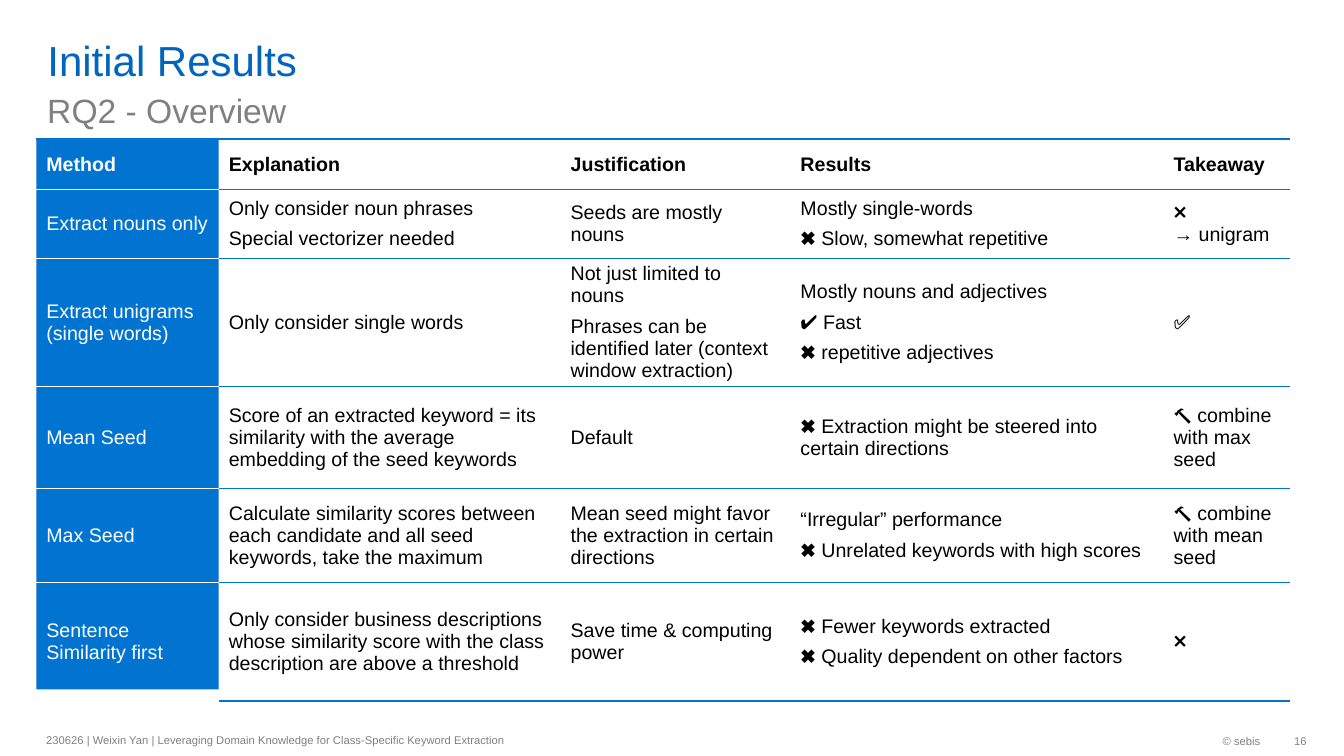
import pptx
import pptx.util
import pptx.oxml.ns
import pptx.dml.color
import pptx.enum.text
import pptx.enum.shapes
from lxml import etree

Inches = pptx.util.Inches
Pt = pptx.util.Pt
ALIGN = pptx.enum.text.PP_ALIGN
ANCHOR = pptx.enum.text.MSO_ANCHOR

BLUE, TITLE, GREY = "0173D0", "0065BD", "808080"
WHITE, BLACK = "FFFFFF", "000000"

COLS = [1.81, 3.39, 2.28, 3.7, 1.26]
HIGHS = [0.5, 0.68, 1.16, 1.01, 0.93, 1.18]

# Within a cell, \n starts a paragraph and \v breaks a line
ROWS = [
    ["Method", "Explanation", "Justification", "Results", "Takeaway"],
    ["Extract nouns only",
     "Only consider noun phrases\nSpecial vectorizer needed",
     "Seeds are mostly nouns",
     "Mostly single-words\n✖️ Slow, somewhat repetitive",
     "❌\v→ unigram"],
    ["Extract unigrams (single words)",
     "Only consider single words",
     "Not just limited to nouns\n"
     "Phrases can be identified later (context window extraction)",
     "Mostly nouns and adjectives\n✔ Fast\n✖️ repetitive adjectives",
     "✅"],
    ["Mean Seed",
     "Score of an extracted keyword = its similarity with the average "
     "embedding of the seed keywords",
     "Default",
     "✖️ Extraction might be steered into certain directions",
     "🔨 combine with max seed"],
    ["Max Seed",
     "Calculate similarity scores between each candidate and all seed "
     "keywords, take the maximum",
     "Mean seed might favor the extraction in certain directions",
     "“Irregular” performance\n✖️ Unrelated keywords with high scores",
     "🔨 combine with mean seed"],
    ["Sentence Similarity first",
     "Only consider business descriptions whose similarity score with the "
     "class description are above a threshold",
     "Save time & computing power",
     "✖️ Fewer keywords extracted\n✖️ Quality dependent on other factors",
     "❌"],
]


def color(code):
    return pptx.dml.color.RGBColor.from_string(code)


class Deck:
    font = "Arial"

    def __init__(self):
        self.prs = pptx.Presentation()
        self.prs.slide_width = Inches(13.33)
        self.prs.slide_height = Inches(7.5)
        self.slide = self.prs.slides.add_slide(self.prs.slide_layouts[5])

    def label(self, frame, text, size, code, bold=False, align=ALIGN.LEFT, after=0):
        frame.text = text
        for para in frame.paragraphs:
            para.alignment = align
            para.space_before = Pt(0)
            para.space_after = Pt(after)
            for run in para.runs:
                run.font.name = self.font
                run.font.size = Pt(size)
                run.font.bold = bold
                run.font.color.rgb = color(code)

    def setup(self, frame, anchor, pads, wrap=True):
        frame.auto_size = pptx.enum.text.MSO_AUTO_SIZE.NONE
        frame.word_wrap = wrap
        frame.vertical_anchor = anchor
        left, top, right, bottom = map(Inches, pads)
        frame.margin_left, frame.margin_top = left, top
        frame.margin_right, frame.margin_bottom = right, bottom

    def title(self, text, box):
        shape = self.slide.shapes.title
        shape.left, shape.top, shape.width, shape.height = map(Inches, box)
        self.setup(shape.text_frame, ANCHOR.BOTTOM, (0.1, 0, 0.1, 0))
        self.label(shape.text_frame, text, 30, TITLE)

    def text(self, text, box, size, anchor=ANCHOR.MIDDLE, align=ALIGN.LEFT,
             pads=(0.1, 0.05, 0.1, 0.05), wrap=True):
        shape = self.slide.shapes.add_textbox(*map(Inches, box))
        self.setup(shape.text_frame, anchor, pads, wrap)
        self.label(shape.text_frame, text, size, GREY, align=align)

    def panel(self, box):
        kind = pptx.enum.shapes.MSO_SHAPE.RECTANGLE
        shape = self.slide.shapes.add_shape(kind, *map(Inches, box))
        shape.shadow.inherit = False
        shape.fill.solid()
        shape.fill.fore_color.rgb = color(BLUE)
        shape.line.fill.background()

    def edge(self, cell, side, code=None, width=0.5):
        props = cell._tc.get_or_add_tcPr()
        line = etree.SubElement(props, pptx.oxml.ns.qn("a:ln" + side))
        if code is None:
            etree.SubElement(line, pptx.oxml.ns.qn("a:noFill"))
            return
        line.set("w", str(int(Pt(width))))
        fill = etree.SubElement(line, pptx.oxml.ns.qn("a:solidFill"))
        etree.SubElement(fill, pptx.oxml.ns.qn("a:srgbClr")).set("val", code)

    def table(self, rows, cols, highs, left, top):
        box = map(Inches, (left, top, sum(cols), sum(highs)))
        grid = self.slide.shapes.add_table(len(rows), len(cols), *box).table
        grid.first_row = grid.horz_banding = False
        for col, width in zip(grid.columns, cols):
            col.width = Inches(width)
        for row, high in zip(grid.rows, highs):
            row.height = Inches(high)
        last = len(rows) - 1
        for i, row in enumerate(rows):
            for j, text in enumerate(row):
                cell = grid.cell(i, j)
                inner = BLUE if j else WHITE
                # Thick blue rules frame the table, thin ones part the rows
                self.edge(cell, "L")
                self.edge(cell, "R")
                self.edge(cell, "T", *((inner, 0.5) if i else (BLUE, 1.5)))
                self.edge(cell, "B", inner, 1.5 if i == last and j else 0.5)
                cell.fill.background()
                cell.vertical_anchor = ANCHOR.MIDDLE
                self.label(cell.text_frame, text, 14, BLACK if j else WHITE,
                           bold=i == 0, after=6)


def main():
    deck = Deck()

    # Headings
    deck.title("Initial Results", (0.37, 0.05, 11.58, 0.79))
    deck.text("RQ2 - Overview", (0.37, 0.84, 11.58, 0.45), 24,
              anchor=ANCHOR.BOTTOM, pads=(0.1, 0, 0.1, 0))

    # Table on its blue method column
    deck.panel((0.36, 1.38, COLS[0], sum(HIGHS)))
    deck.table(ROWS, COLS, HIGHS, 0.36, 1.38)

    # Footer
    deck.text("230626 | Weixin Yan | Leveraging Domain Knowledge for "
              "Class-Specific Keyword Extraction", (0.36, 7.18, 6.3, 0.32), 8)
    deck.text("© sebis", (10.26, 7.19, 2.34, 0.32), 8, align=ALIGN.RIGHT, wrap=False)
    deck.text("16", (12.6, 7.19, 0.36, 0.32), 8, align=ALIGN.RIGHT,
              pads=(0.1, 0.05, 0, 0.05), wrap=False)

    deck.prs.save("out.pptx")


if __name__ == "__main__":
    main()
